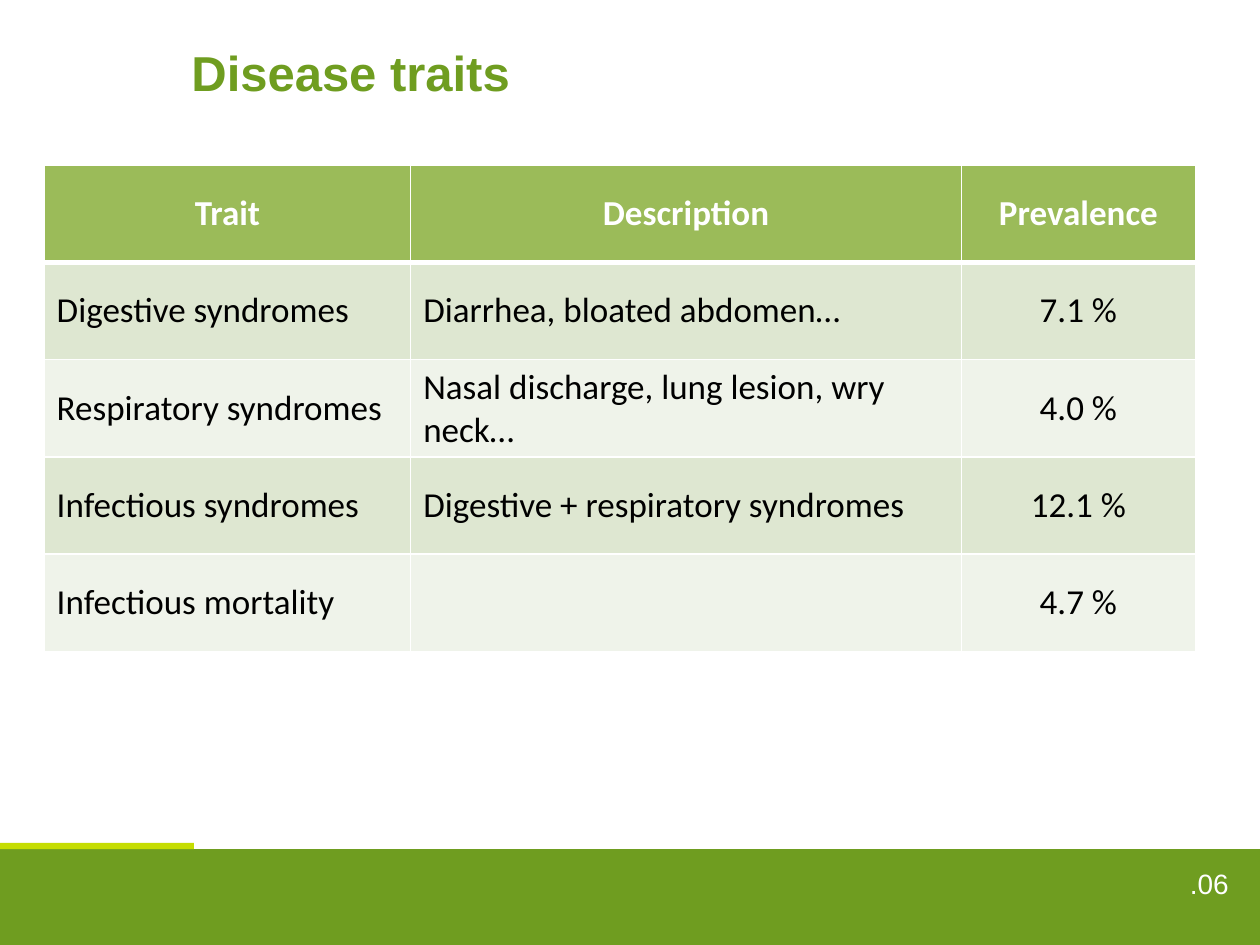
from lxml.etree import SubElement
from pptx import Presentation
from pptx.dml.color import RGBColor
from pptx.enum.shapes import MSO_SHAPE
from pptx.enum.text import MSO_ANCHOR, PP_ALIGN
from pptx.oxml.ns import qn
from pptx.util import Cm, Pt

COLORS = {
    "white": "FFFFFF",
    "black": "000000",
    "green": "6F9D20",
    "lime": "C5DD01",
    "header": "9BBB59",
    "band_dark": "DEE7D1",
    "band_light": "EFF3EA",
}
COL_WIDTHS = (7.39, 11.1, 4.72)
ROWS = (
    ("Trait", "Description", "Prevalence"),
    ("Digestive syndromes", "Diarrhea, bloated abdomen…", "7.1 %"),
    ("Respiratory syndromes", "Nasal discharge, lung lesion, wry neck…", "4.0 %"),
    ("Infectious syndromes", "Digestive + respiratory syndromes", "12.1 %"),
    ("Infectious mortality", "", "4.7 %"),
)


def rgb(name):
    """Return the named colour."""
    return RGBColor.from_string(COLORS[name])


def style_text(p, font, size, color, bold=False, align=PP_ALIGN.LEFT):
    """Align a paragraph and format its runs."""
    p.alignment = align
    for r in p.runs:
        r.font.name = font
        r.font.size = Pt(size)
        r.font.bold = bold
        r.font.color.rgb = rgb(color)


def add_bar(s, x, y, w, h, color):
    """Add a plain filled rectangle."""
    sp = s.shapes.add_shape(MSO_SHAPE.RECTANGLE, Cm(x), Cm(y), Cm(w), Cm(h))
    sp.shadow.inherit = False
    sp.fill.solid()
    sp.fill.fore_color.rgb = rgb(color)
    sp.line.fill.background()
    return sp


def add_footer(s, x, y, w, h):
    """Add the green band with its accent and page number."""
    accent_h = 0.13
    add_bar(s, x, y, w, h, "green")
    add_bar(s, x, y - accent_h, 3.91, accent_h, "lime")
    box = s.shapes.add_textbox(Cm(x + w - 3.5), Cm(y + 0.23), Cm(3.12), Cm(0.69))
    tf = box.text_frame
    tf.word_wrap = True
    tf.text = ".06"
    style_text(tf.paragraphs[0], "Arial", 16, "white", align=PP_ALIGN.RIGHT)


def add_title(s, x, y, w, h):
    """Add the slide title on its white box."""
    tf = add_bar(s, x, y, w, h, "white").text_frame
    tf.word_wrap = True
    tf.vertical_anchor = MSO_ANCHOR.TOP
    tf.text = "Disease traits"
    style_text(tf.paragraphs[0], "Arial", 28, "green", bold=True)


def set_borders(cell, top, bottom):
    """Draw white borders with the given top and bottom widths."""
    tc_pr = cell._tc.get_or_add_tcPr()
    for tag, width in (("a:lnL", 1), ("a:lnR", 1), ("a:lnT", top), ("a:lnB", bottom)):
        ln = SubElement(tc_pr, qn(tag), w=str(Pt(width)))
        fill = SubElement(ln, qn("a:solidFill"))
        SubElement(fill, qn("a:srgbClr"), val=COLORS["white"])


def add_trait_table(s, x, y, w, h):
    """Add the banded table of disease traits."""
    frame = s.shapes.add_table(len(ROWS), len(COL_WIDTHS), Cm(x), Cm(y), Cm(w), Cm(h))
    table = frame.table
    for col, width in zip(table.columns, COL_WIDTHS):
        col.width = Cm(width)
    for i, values in enumerate(ROWS):
        table.rows[i].height = Cm(h / len(ROWS))
        is_header = i == 0
        band = "header" if is_header else "band_dark" if i % 2 else "band_light"
        for j, value in enumerate(values):
            cell = table.cell(i, j)
            set_borders(cell, 3 if i == 1 else 1, 3 if is_header else 1)
            cell.fill.solid()
            cell.fill.fore_color.rgb = rgb(band)
            cell.vertical_anchor = MSO_ANCHOR.MIDDLE
            cell.text_frame.text = value
            centred = is_header or j == len(values) - 1
            style_text(
                cell.text_frame.paragraphs[0], "Calibri", 20,
                "white" if is_header else "black", is_header,
                PP_ALIGN.CENTER if centred else PP_ALIGN.LEFT,
            )


def main():
    """Build and save the slide."""
    prs = Presentation()
    prs.slide_width, prs.slide_height = Cm(25.4), Cm(19.05)
    s = prs.slides.add_slide(prs.slide_layouts[6])
    add_footer(s, 0, 17.12, 25.4, 1.93)
    add_title(s, 3.61, 0.74, 18.8, 1.45)
    add_trait_table(s, 0.89, 3.33, sum(COL_WIDTHS), 9.8)
    prs.save("out.pptx")


if __name__ == "__main__":
    main()
